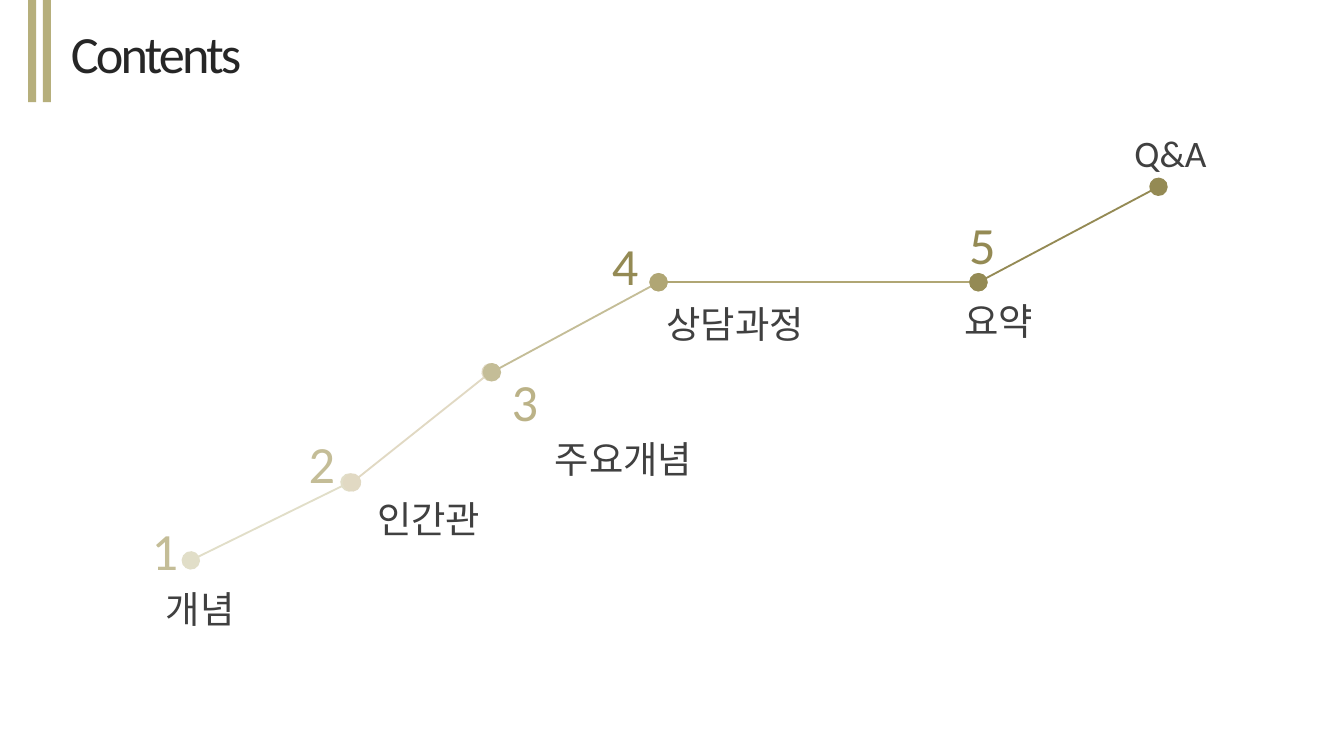
"""Build a contents slide with a rising path of numbered topics."""
from dataclasses import dataclass

from lxml.etree import SubElement
from pptx import Presentation
from pptx.dml.color import RGBColor
from pptx.enum.shapes import MSO_CONNECTOR, MSO_SHAPE
from pptx.enum.text import MSO_AUTO_SIZE, PP_ALIGN
from pptx.oxml.ns import qn
from pptx.slide import Slide
from pptx.util import Inches, Pt

HUES = {
    "title": "262626",
    "text": "404040",
    "bar": "B6AF7C",
    "pale": "E1DEC8",
    "cream": "E1D9C3",
    "sand": "C4BD97",
    "straw": "BBB287",
    "gold": "B0A674",
    "olive": "948A54",
}
LATIN = "Calibri"
HANGUL = "Noto Sans CJK KR"


@dataclass
class Label:
    text: str
    left: float
    top: float
    width: float
    hue: str = "text"
    size: int = 20
    font: str = HANGUL
    align: PP_ALIGN = PP_ALIGN.CENTER
    space: int = 0


@dataclass
class Link:
    start: tuple[float, float]
    end: tuple[float, float]
    hue: str


def digit(text: str, left: float, top: float, width: float, hue: str) -> Label:
    """Return the label of a step number."""
    return Label(text, left, top, width, hue, 28, LATIN)


LINKS = [
    Link((1.42, 4.17), (2.6, 3.59), "pale"),
    Link((2.62, 3.59), (3.65, 2.77), "cream"),
    Link((3.66, 2.77), (4.9, 2.1), "sand"),
    Link((4.9, 2.1), (7.28, 2.1), "gold"),
    Link((8.62, 1.39), (7.28, 2.1), "olive"),
]
LABELS = [
    Label("Contents", 0.43, 0.11, 1.77, "title", 28, LATIN, PP_ALIGN.LEFT, -150),
    Label("Q&A", 8.33, 0.92, 0.76, font=LATIN),
    digit("1", 1.03, 3.81, 0.35, "sand"),
    digit("2", 2.19, 3.16, 0.41, "sand"),
    digit("3", 3.7, 2.7, 0.41, "straw"),
    digit("4", 4.44, 1.69, 0.42, "olive"),
    digit("5", 7.11, 1.53, 0.4, "olive"),
    Label("개념", 1.11, 4.31, 0.76),
    Label("인간관", 2.67, 3.64, 1.04),
    Label("주요개념", 3.98, 3.2, 1.32),
    Label("상담과정", 4.81, 2.19, 1.32),
    Label("요약", 7.05, 2.17, 0.76),
]


def color(hue: str) -> RGBColor:
    """Return the named colour."""
    return RGBColor.from_string(HUES[hue])


def add_label(slide: Slide, label: Label) -> None:
    """Draw one line of text."""
    height = 0.57 if label.size == 28 else 0.44
    box = slide.shapes.add_textbox(
        Inches(label.left), Inches(label.top), Inches(label.width), Inches(height)
    )
    frame = box.text_frame
    frame.word_wrap = False
    frame.auto_size = MSO_AUTO_SIZE.SHAPE_TO_FIT_TEXT
    para = frame.paragraphs[0]
    para.alignment = label.align
    run = para.add_run()
    run.text = label.text
    font = para.font
    font.size = Pt(label.size)
    font.name = label.font
    font.color.rgb = color(label.hue)
    props = run._r.get_or_add_rPr()
    if label.space:
        props.set("spc", str(label.space))
    if label.font == HANGUL:
        SubElement(props, qn("a:ea"), typeface=HANGUL)


def add_link(slide: Slide, link: Link) -> None:
    """Draw a line with a dot at each end."""
    ends = [Inches(value) for value in (*link.start, *link.end)]
    line = slide.shapes.add_connector(MSO_CONNECTOR.STRAIGHT, *ends)
    line.line.width = Pt(1)
    line.line.color.rgb = color(link.hue)
    props = line._element.spPr
    for tag in ("a:headEnd", "a:tailEnd"):
        SubElement(props.find(qn("a:ln")), qn(tag), type="oval", w="lg", len="lg")
    SubElement(props, qn("a:effectLst"))


def add_bar(slide: Slide, left: float) -> None:
    """Draw an upright bar at the top edge."""
    bar = slide.shapes.add_shape(
        MSO_SHAPE.RECTANGLE, Inches(left), Inches(-0.02), Inches(0.06), Inches(0.78)
    )
    bar.shadow.inherit = False
    bar.fill.solid()
    bar.fill.fore_color.rgb = color("bar")
    bar.line.fill.background()


def main() -> None:
    """Build and save the slide."""
    deck = Presentation()
    deck.slide_width = Inches(10)
    deck.slide_height = Inches(10 * 9 / 16)
    slide = deck.slides.add_slide(deck.slide_layouts[6])
    for link in LINKS:
        add_link(slide, link)
    for left in (0.21, 0.32):
        add_bar(slide, left)
    for label in LABELS:
        add_label(slide, label)
    deck.save("out.pptx")


if __name__ == "__main__":
    main()
